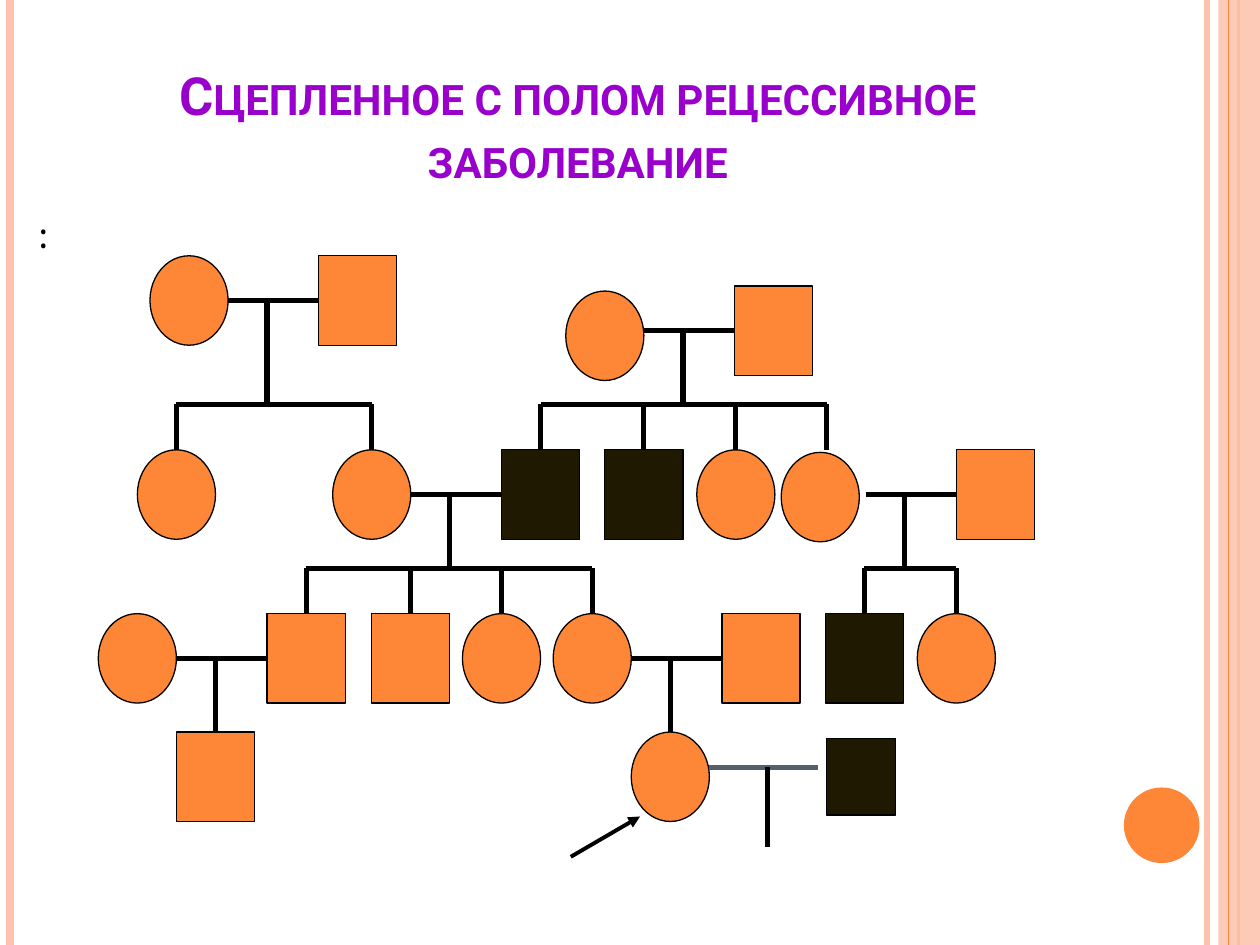
from lxml import etree
from pptx import Presentation
from pptx.dml.color import RGBColor
from pptx.enum.shapes import MSO_CONNECTOR, MSO_SHAPE
from pptx.enum.text import MSO_ANCHOR, MSO_AUTO_SIZE, PP_ALIGN
from pptx.oxml.ns import qn
from pptx.util import Inches, Pt

STRAIGHT = MSO_CONNECTOR.STRAIGHT
MALE, FEMALE = MSO_SHAPE.RECTANGLE, MSO_SHAPE.OVAL
CENTER, LEFT = PP_ALIGN.CENTER, PP_ALIGN.LEFT
TOP, BOTTOM = MSO_ANCHOR.TOP, MSO_ANCHOR.BOTTOM
NO_AUTOFIT = MSO_AUTO_SIZE.NONE
RECT_TOP, RECT_LEFT = 0, 1

COLORS = {
    "healthy": "FE8637",
    "affected": "1E1900",
    "stripe": "FEC3AE",
    "title": "9900CC",
    "ink": "000000",
    "partner": "575F6D",
}


def write_text(holder, text, box, font, size, color, bold=False, align=LEFT,
               anchor=TOP, space_before=0):
    holder.left, holder.top, holder.width, holder.height = map(Inches, box)
    frame = holder.text_frame
    frame.word_wrap = True
    frame.auto_size = NO_AUTOFIT
    frame.vertical_anchor = anchor
    paragraph = frame.paragraphs[0]
    paragraph.alignment = align
    paragraph.space_before = Pt(space_before)
    run = paragraph.add_run()
    run.text = text
    run.font.name = font
    run.font.size = Pt(size)
    run.font.bold = bold
    run.font.color.rgb = RGBColor.from_string(COLORS[color])
    return paragraph


def draw_line(shapes, start, end, color="ink", width=3):
    line = shapes.add_connector(STRAIGHT, *map(Inches, (*start, *end)))
    line.line.color.rgb = RGBColor.from_string(COLORS[color])
    line.line.width = Pt(width)
    etree.SubElement(line._element.spPr, qn("a:effectLst"))
    return line


prs = Presentation()
prs.slide_width, prs.slide_height = Inches(10), Inches(7.5)
slide = prs.slides.add_slide(prs.slide_layouts[1])
title, body = slide.placeholders

heading = write_text(title, "Сцепленное с полом рецессивное заболевание",
                     (0.5, 0.3, 8.17, 1.25), "Roboto", 30, "title", bold=True,
                     align=CENTER, anchor=BOTTOM)
heading.runs[0].font._element.set("cap", "small")

note = write_text(body, ":", (0.2, 1.59, 4.11, 0.66), "Cambria", 24, "ink",
                  space_before=6)
note_format = note._p.get_or_add_pPr()
note_format.set("marL", str(Inches(0.3)))
note_format.set("indent", str(-Inches(0.3)))
etree.SubElement(note_format, qn("a:buNone"))

for x, color, width in [(9.58, "stripe", 3), (0.08, "stripe", 4.5),
                        (9.83, "healthy", 1.5)]:
    draw_line(slide.shapes, (x, 0), (x, 7.5), color, width)

for kind, box, color, outlined, opacity in [
    (MALE, (9.67, 0, 0.33, 7.5), "stripe", False, 87),
    (FEMALE, (8.92, 6.25, 0.6, 0.6), "healthy", False, 100),
    (MALE, (6.56, 5.86, 0.55, 0.61), "affected", True, 100),
]:
    block = slide.shapes.add_shape(kind, *map(Inches, box))
    block.shadow.inherit = False
    block.fill.solid()
    block.fill.fore_color.rgb = RGBColor.from_string(COLORS[color])
    if opacity < 100:
        tint = block._element.spPr.find(qn("a:solidFill"))[0]
        etree.SubElement(tint, qn("a:alpha"), val=str(opacity * 1000))
    if outlined:
        block.line.color.rgb = RGBColor.from_string(COLORS["ink"])
        block.line.width = Pt(0.75)
    else:
        block.line.fill.background()

draw_line(slide.shapes, (9.75, 0), (9.75, 7.5), "healthy", 0.75)

WIDTH, HEIGHT = 0.62, 0.71
PARENTS, CHILDREN, PROBAND = 3.57, 4.87, 5.81
people = {
    "grandmother 1": (FEMALE, 1.19, 2.03, "healthy"),
    "grandfather 1": (MALE, 2.53, 2.03, "healthy"),
    "grandmother 2": (FEMALE, 4.49, 2.31, "healthy"),
    "grandfather 2": (MALE, 5.83, 2.27, "healthy"),
    "aunt 1": (FEMALE, 1.09, PARENTS, "healthy"),
    "mother": (FEMALE, 2.64, PARENTS, "healthy"),
    "father": (MALE, 3.98, PARENTS, "affected"),
    "uncle": (MALE, 4.8, PARENTS, "affected"),
    "aunt 2": (FEMALE, 5.53, PARENTS, "healthy"),
    "aunt 3": (FEMALE, 6.25, PARENTS, "healthy"),
    "aunt's husband": (MALE, 7.59, PARENTS, "healthy"),
    "son's wife": (FEMALE, 0.78, CHILDREN, "healthy"),
    "son 1": (MALE, 2.12, CHILDREN, "healthy"),
    "son 2": (MALE, 2.95, CHILDREN, "healthy"),
    "daughter 1": (FEMALE, 3.67, CHILDREN, "healthy"),
    "daughter 2": (FEMALE, 4.39, CHILDREN, "healthy"),
    "daughter's husband": (MALE, 5.73, CHILDREN, "healthy"),
    "cousin 1": (MALE, 6.55, CHILDREN, "affected"),
    "cousin 2": (FEMALE, 7.28, CHILDREN, "healthy"),
    "grandson": (MALE, 1.4, PROBAND, "healthy"),
    "proband": (FEMALE, 5.01, PROBAND, "healthy"),
}
nudges = {"aunt 3": (-0.05, 0.02)}
families = [
    ("grandmother 1", "grandfather 1", ["aunt 1", "mother"]),
    ("grandmother 2", "grandfather 2", ["father", "uncle", "aunt 2", "aunt 3"]),
    ("mother", "father", ["son 1", "son 2", "daughter 1", "daughter 2"]),
    ("aunt 3", "aunt's husband", ["cousin 1", "cousin 2"]),
    ("son's wife", "son 1", ["grandson"]),
    ("daughter 2", "daughter's husband", ["proband"]),
]

pedigree = slide.shapes.add_group_shape().shapes
symbols = {}
for person, (sex, x, y, status) in people.items():
    dx, dy = nudges.get(person, (0, 0))
    symbol = pedigree.add_shape(sex, *map(Inches, (x + dx, y + dy, WIDTH, HEIGHT)))
    symbol.shadow.inherit = False
    symbol.fill.solid()
    symbol.fill.fore_color.rgb = RGBColor.from_string(COLORS[status])
    symbol.line.color.rgb = RGBColor.from_string(COLORS["ink"])
    symbol.line.width = Pt(0.75)
    symbols[person] = symbol

for wife, husband, offspring in families:
    union_start = people[wife][1] + WIDTH
    union_end = people[husband][1]
    union_y = people[husband][2] + HEIGHT / 2
    stem_x = union_start + WIDTH / 2
    union = draw_line(pedigree, (union_start, union_y), (union_end, union_y))
    union.end_connect(symbols[husband], RECT_LEFT)

    centers = [people[child][1] + WIDTH / 2 for child in offspring]
    child_top = people[offspring[0]][2]
    rail_y = union_y
    if len(offspring) > 1:
        rail_y = child_top - 0.36
        draw_line(pedigree, (stem_x, union_y), (stem_x, rail_y))
        draw_line(pedigree, (centers[0], rail_y), (centers[-1], rail_y))
    for child, center in zip(offspring, centers):
        descent = draw_line(pedigree, (center, rail_y), (center, child_top))
        if people[child][0] == MALE:
            descent.end_connect(symbols[child], RECT_TOP)

draw_line(slide.shapes, (5.63, 6.09), (6.49, 6.09), "partner")
draw_line(slide.shapes, (6.09, 6.09), (6.09, 6.72))
pointer = draw_line(slide.shapes, (4.53, 6.8), (5.08, 6.48), width=2.25)
etree.SubElement(pointer.line._get_or_add_ln(), qn("a:tailEnd"), type="triangle")

prs.save("out.pptx")
